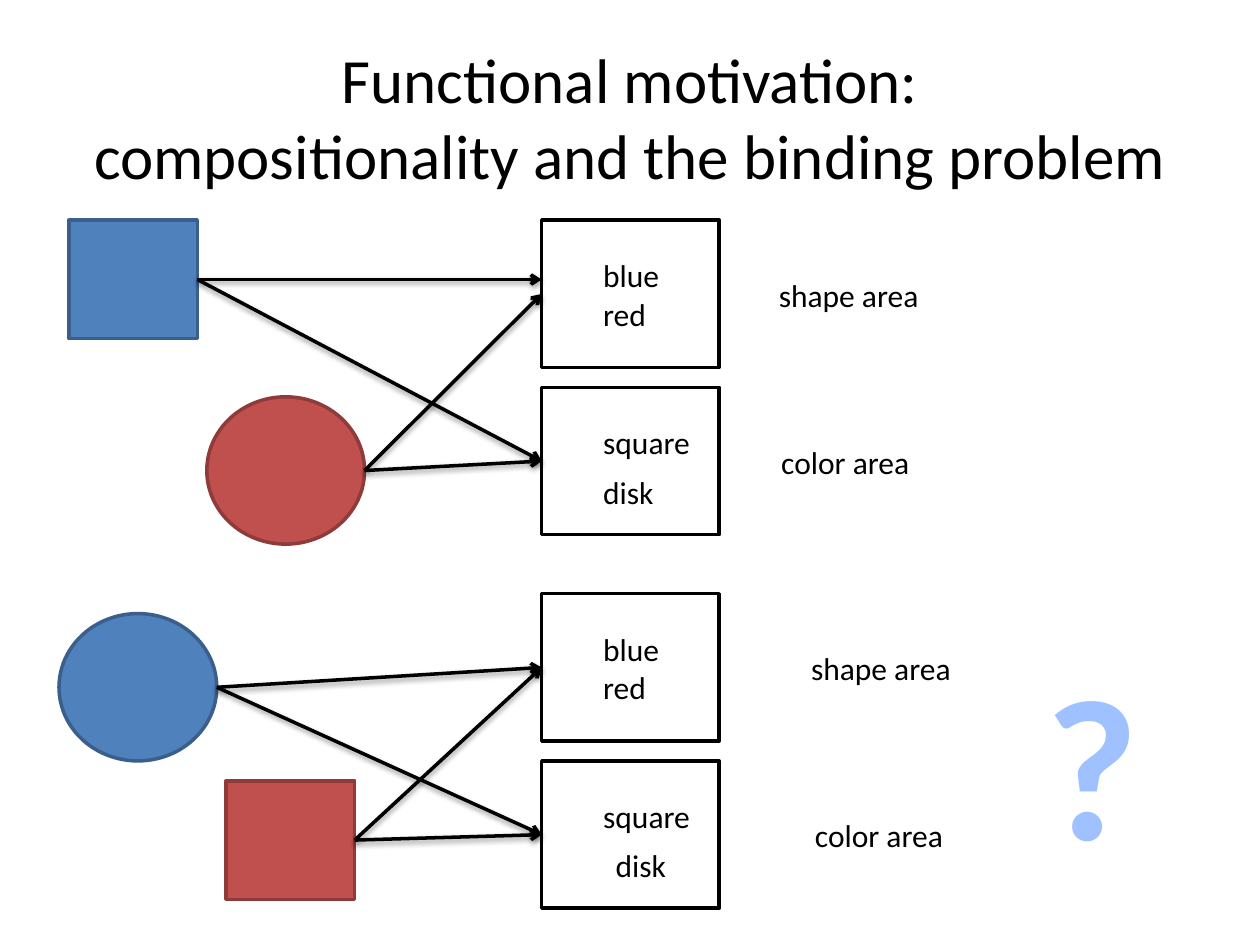
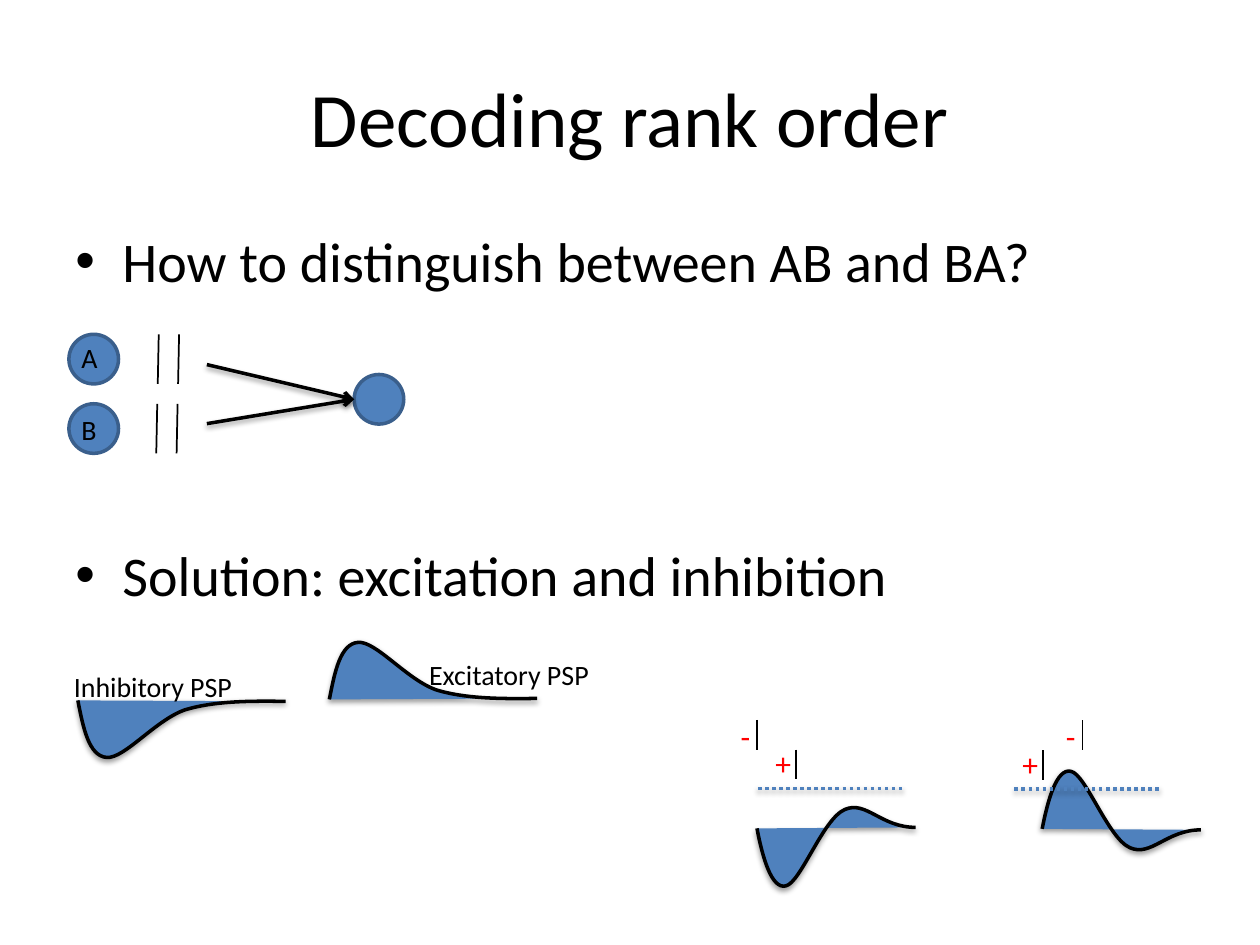
import lxml.etree
import pptx
import pptx.dml.color
import pptx.enum.dml
import pptx.enum.shapes
import pptx.enum.text
import pptx.oxml
import pptx.oxml.ns
import pptx.util

Cm, Pt = pptx.util.Cm, pptx.util.Pt
RGB = pptx.dml.color.RGBColor
SHAPE = pptx.enum.shapes.MSO_SHAPE
TEXT = pptx.enum.text
qn = pptx.oxml.ns.qn

BLACK = RGB(0x00, 0x00, 0x00)
WHITE = RGB(0xFF, 0xFF, 0xFF)
RED = RGB(0xFF, 0x00, 0x00)
BLUE, BLUE_EDGE = RGB(0x4F, 0x81, 0xBD), RGB(0x3A, 0x5F, 0x8C)
BRICK, BRICK_EDGE = RGB(0xC0, 0x50, 0x4D), RGB(0x8E, 0x3B, 0x39)
QUESTION_EDGE = RGB(0x46, 0x7A, 0xB8)
QUESTION_STOPS = [
    (0, RGB(0xBF, 0xD3, 0xF9)), (9, RGB(0xA0, 0xC1, 0xFF)),
    (50, RGB(0x00, 0x3D, 0x85)), (79, RGB(0xA0, 0xC1, 0xFF)),
    (100, RGB(0xBF, 0xD3, 0xF9)),
]
FONT = "Calibri"
LABEL_FORMAT = {"word_wrap": False, "vertical_anchor": TEXT.MSO_ANCHOR.TOP,
                "auto_size": TEXT.MSO_AUTO_SIZE.SHAPE_TO_FIT_TEXT}
BLOCK_FORMAT = {"word_wrap": True, "auto_size": TEXT.MSO_AUTO_SIZE.NONE}
TITLE_BOX = (1.27, 0.76, 22.86, 3.18)

# Stimuli: preset shape, width, height
SQUARE = (SHAPE.RECTANGLE, 2.59, 2.39)
DISK = (SHAPE.OVAL, 3.18, 2.97)
AREA = (SHAPE.RECTANGLE, 3.58, 2.97)

# Chains of cubic Bezier points, relative to the start of the trace
PSP_CURVE = [(0, 0), (0.11, 0.56), (0.22, 1.12), (0.58, 1.15), (0.94, 1.18),
             (1.56, 0.4), (2.16, 0.19), (2.76, 0.01), (3.48, 0.01), (4.19, 0.02)]
RESPONSE_CURVE = [(0, 0), (0.11, 0.57), (0.29, 1.23), (0.58, 1.16), (0.88, 1.1),
                  (1.33, -0.19), (1.77, -0.38), (2.2, -0.57), (2.5, -0.02),
                  (3.2, -0.02)]


def set_format(target, values):
    for name, value in values.items():
        setattr(target, name, value)


def set_effect(shape, shadow):
    """Replace the theme shadow by a soft one, or by none."""
    effects = lxml.etree.SubElement(shape._element.spPr, qn("a:effectLst"))
    if shadow:
        outer = lxml.etree.SubElement(effects, qn("a:outerShdw"), blurRad="40000",
                                      dist="20000", dir="5400000", rotWithShape="0")
        color = lxml.etree.SubElement(outer, qn("a:srgbClr"), val=str(BLACK))
        lxml.etree.SubElement(color, qn("a:alpha"), val="38000")


def paint(shape, fill, edge, shadow=False):
    shape.fill.solid()
    shape.fill.fore_color.rgb = fill
    shape.line.color.rgb = edge
    shape.line.width = Pt(2)
    set_effect(shape, shadow)
    return shape


def add_figure(slide, figure, left, top, fill, edge):
    preset, width, height = figure
    shape = slide.shapes.add_shape(preset, Cm(left), Cm(top), Cm(width), Cm(height))
    return paint(shape, fill, edge)


def add_line(slide, start, end, color=BLACK, width=2, arrow=False, dash=None,
             shadow=True, source=None, target=None):
    line = slide.shapes.add_connector(
        pptx.enum.shapes.MSO_CONNECTOR.STRAIGHT, *map(Cm, (*start, *end)))
    if source is not None:
        line.begin_connect(source, 3)
    if target is not None:
        line.end_connect(target, 1)
    line.line.color.rgb = color
    line.line.width = Pt(width)
    if dash is not None:
        line.line.dash_style = dash
    if arrow:
        lxml.etree.SubElement(line.line._get_or_add_ln(), qn("a:tailEnd"), type="arrow")
    set_effect(line, shadow)


def add_spike(slide, x, top, height, slant=0):
    add_line(slide, (x, top), (x - slant, top + height), width=1, shadow=False)


def add_run(paragraph, words, size, color=BLACK):
    run = paragraph.add_run()
    run.text = words
    set_format(run.font, {"name": FONT, "size": Pt(size)})
    run.font.color.rgb = color
    return run


def add_frame(slide, box, values):
    frame = slide.shapes.add_textbox(*map(Cm, box)).text_frame
    set_format(frame, values)
    return frame


def add_label(slide, words, left, top, width, size=18, color=BLACK):
    height = 0.25 + size * 0.043
    frame = add_frame(slide, (left, top, width, height), LABEL_FORMAT)
    return add_run(frame.paragraphs[0], words, size, color)


def add_title(slide, lines, size):
    frame = add_frame(slide, TITLE_BOX, BLOCK_FORMAT)
    frame.vertical_anchor = TEXT.MSO_ANCHOR.MIDDLE
    heading = frame.paragraphs[0]
    heading.alignment = TEXT.PP_ALIGN.CENTER
    for index, words in enumerate(lines):
        if index:
            heading.add_line_break()
        add_run(heading, words, size)


def add_trace(slide, curve, left, top, sign):
    """Draw a filled Bezier chain; sign -1 turns it upside down."""
    points = [(Cm(left + x), Cm(top + sign * y)) for x, y in curve]
    builder = slide.shapes.build_freeform(*points[0])
    builder.add_line_segments(points[1:], close=False)
    trace = builder.convert_to_shape()

    # Join each three line segments into one cubic curve
    segments = list(trace._element.iter(qn("a:lnTo")))
    for first in range(0, len(segments), 3):
        cubic = lxml.etree.Element(qn("a:cubicBezTo"))
        segments[first].addprevious(cubic)
        for segment in segments[first:first + 3]:
            cubic.append(segment[0])
            segment.getparent().remove(segment)
    paint(trace, BLUE, BLACK, shadow=True)


def add_binding_panel(slide, top, blue, red, label_lefts, disk_indent=0,
                      first_arrow_rise=0):
    """Two stimuli, each projecting to both feature areas."""
    area_left, pitch, indent = 10.92, 3.37, 0.99
    area_tops = (top, top + pitch)
    areas = [add_figure(slide, AREA, area_left, y, WHITE, BLACK) for y in area_tops]

    # Words in the areas: text, area, shift right, drop, width
    for words, row, shift, drop, width in (
            ("blue", 0, 0, 0.6, 1.65), ("red", 0, 0, 1.38, 1.4),
            ("square", 1, 0, 0.6, 2.29), ("disk", 1, disk_indent, 1.6, 1.55)):
        add_label(slide, words, area_left + indent + shift, area_tops[row] + drop, width)
    for words, left, y, width in zip(("shape area", "color area"), label_lefts,
                                     area_tops, (3.35, 3.12)):
        add_label(slide, words, left, y + indent, width)

    # Stimuli and their arrows
    for (figure, left, drop), fill, edge, rise in (
            (blue, BLUE, BLUE_EDGE, first_arrow_rise), (red, BRICK, BRICK_EDGE, 0)):
        stimulus = add_figure(slide, figure, left, top + drop, fill, edge)
        preset, width, height = figure
        start = (left + width, top + drop + height / 2)
        for area, y, lift in zip(areas, area_tops, (rise, 0)):
            add_line(slide, start, (area_left, y + AREA[2] / 2 - lift), arrow=True,
                     source=stimulus if preset == SHAPE.RECTANGLE else None,
                     target=None if lift else area)


def add_question_mark(slide, left, top):
    run = add_label(slide, "?", left, top, 3.02, size=115)
    run.font.bold = True
    properties = run.font._element
    properties.remove(properties.find(qn("a:solidFill")))
    outline = lxml.etree.Element(qn("a:ln"), w="10541")
    edge = lxml.etree.SubElement(outline, qn("a:solidFill"))
    lxml.etree.SubElement(edge, qn("a:srgbClr"), val=str(QUESTION_EDGE))
    gradient = lxml.etree.Element(qn("a:gradFill"))
    stops = lxml.etree.SubElement(gradient, qn("a:gsLst"))
    for percent, color in QUESTION_STOPS:
        stop = lxml.etree.SubElement(stops, qn("a:gs"), pos=str(percent * 1000))
        lxml.etree.SubElement(stop, qn("a:srgbClr"), val=str(color))
    lxml.etree.SubElement(gradient, qn("a:lin"), ang="5400000")
    properties.insert(0, outline)
    properties.insert(1, gradient)


def add_bullets(slide, box, lines, gap):
    frame = add_frame(slide, box, BLOCK_FORMAT)
    for index, words in enumerate(lines):
        bullet = frame.add_paragraph() if index else frame.paragraphs[0]
        bullet.space_before = Pt(gap if index else 0)
        properties = bullet._p.get_or_add_pPr()
        properties.set("marL", str(Cm(0.95)))
        properties.set("indent", str(Cm(-0.95)))
        lxml.etree.SubElement(properties, qn("a:buFont"), typeface="Arial")
        lxml.etree.SubElement(properties, qn("a:buChar"), char="•")
        add_run(bullet, words, 32)


def add_network(slide, left, top):
    """Neurons A and B, their spikes, and the neuron they feed."""
    neuron, pitch = (SHAPE.OVAL, 1, 1), 1.4
    target = (left + 5.75, top + 1.31)
    add_figure(slide, neuron, left + 5.75, top + 0.81, BLUE, BLUE_EDGE)
    for row, (name, arrow_drop) in enumerate((("A", 0.61), ("B", 1.8))):
        y = top + row * pitch
        add_figure(slide, neuron, left, y, BLUE, BLUE_EDGE)
        add_label(slide, name, left, y + row * 0.05, 0.89, size=16)
        for offset in (1.81, 2.22):
            add_spike(slide, left + offset - row * 0.03, y, 1, slant=0.02)
        add_line(slide, (left + 2.78, top + arrow_drop), target, arrow=True)


def add_psp(slide, words, left, top, sign, label_shift, label_rise, label_width):
    add_trace(slide, PSP_CURVE, left, top, sign)
    add_label(slide, words, left + label_shift, top - label_rise, label_width, size=16)


def add_response(slide, left, top, sign, minus_x, plus_x, threshold_x):
    """Spike times, threshold and the summed potential."""
    add_trace(slide, RESPONSE_CURVE, left, top, sign)
    for mark, x, rise, label_rise, shift, width in (
            ("-", minus_x, 2.19, 2.38, 0.58, 0.74), ("+", plus_x, 1.59, 1.82, 0.67, 0.89)):
        add_spike(slide, left + x, top - rise, 0.6)
        add_label(slide, mark, left + x - shift, top - label_rise, width, color=RED)
    start = left + threshold_x
    add_line(slide, (start, top - 0.8), (start + 2.97, top - 0.8), color=BLUE,
             dash=pptx.enum.dml.MSO_LINE.ROUND_DOT)


def build_binding_slide(slide):
    add_title(slide, ("Functional motivation:",
                      "compositionality and the binding problem"), 36)
    add_binding_panel(slide, 4.44, (SQUARE, 1.39, 0), (DISK, 4.17, 3.56),
                      (15.45, 15.5), first_arrow_rise=0.29)
    add_binding_panel(slide, 11.97, (DISK, 1.19, 0.4), (SQUARE, 4.56, 3.77),
                      (16.1, 16.18), disk_indent=0.25)
    add_question_mark(slide, 20.83, 12.77)


def build_decoding_slide(slide):
    add_title(slide, ("Decoding rank order",), 44)
    add_bullets(slide, (1.27, 4.45, 22.86, 12.57),
                ("How to distinguish between AB and BA?",
                 "Solution: excitation and inhibition"), gap=140.5)
    add_network(slide, 1.39, 6.74)
    add_psp(slide, "Inhibitory PSP", 1.57, 14.12, 1, -0.33, 0.75, 3.76)
    add_psp(slide, "Excitatory PSP", 6.64, 14.1, -1, 1.76, 0.97, 3.89)
    add_response(slide, 15.26, 16.7, 1, minus_x=0, plus_x=0.79, threshold_x=0.02)
    add_response(slide, 21.01, 16.71, -1, minus_x=0.81, plus_x=0.02, threshold_x=-0.56)


def main():
    deck = pptx.Presentation()
    set_format(deck, {"slide_width": Cm(25.4), "slide_height": Cm(19.05)})
    for build in (build_binding_slide, build_decoding_slide):
        build(deck.slides.add_slide(deck.slide_layouts[6]))
    deck.save("out.pptx")


if __name__ == "__main__":
    main()
